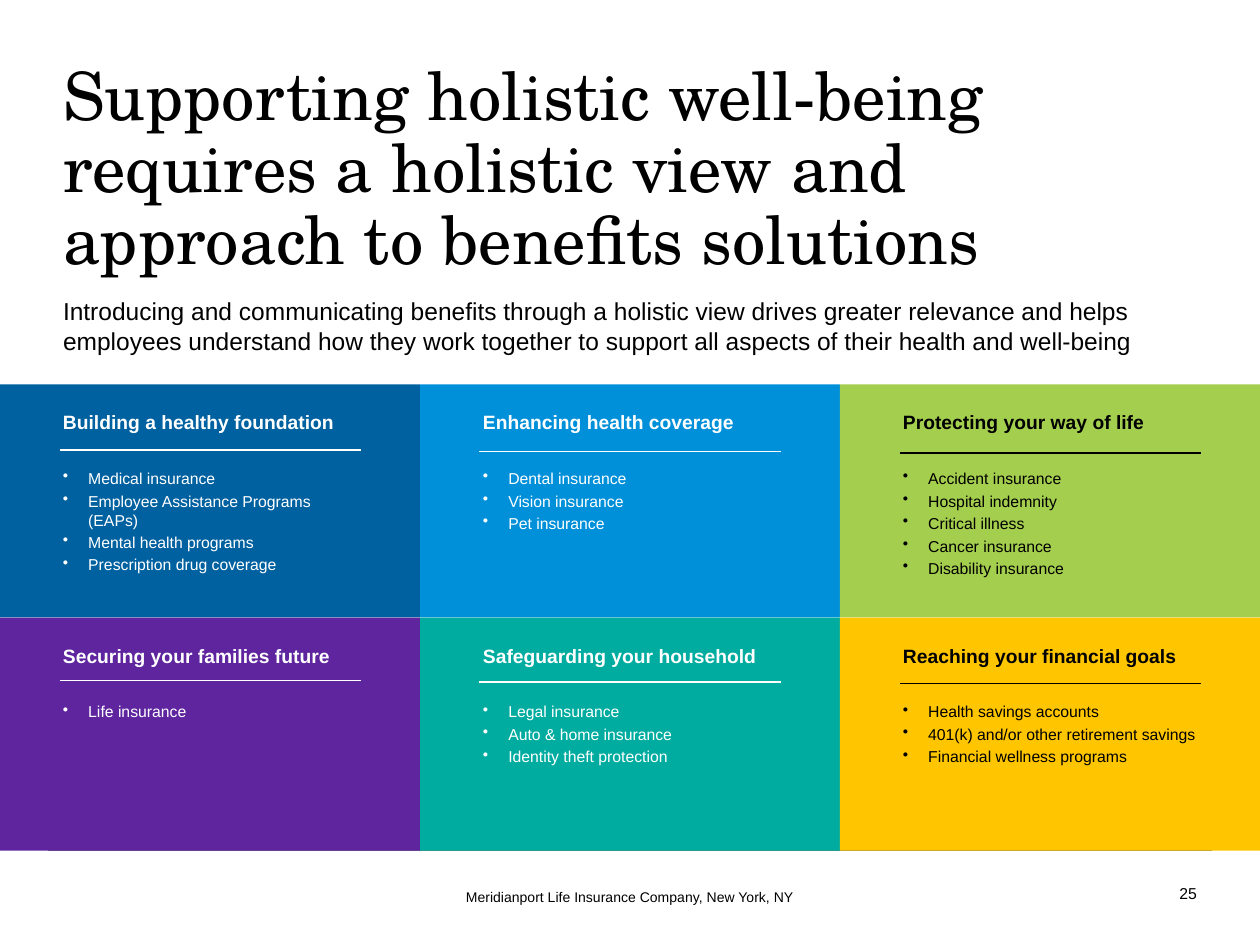
from dataclasses import dataclass

from lxml import etree
from pptx import Presentation
from pptx.dml.color import RGBColor
from pptx.enum.shapes import MSO_CONNECTOR, MSO_SHAPE
from pptx.enum.text import MSO_ANCHOR, MSO_AUTO_SIZE, PP_ALIGN
from pptx.oxml.ns import qn
from pptx.util import Cm, Pt

LEFT, CENTER, RIGHT = PP_ALIGN.LEFT, PP_ALIGN.CENTER, PP_ALIGN.RIGHT
TOP, MIDDLE = MSO_ANCHOR.TOP, MSO_ANCHOR.MIDDLE
RECTANGLE, STRAIGHT = MSO_SHAPE.RECTANGLE, MSO_CONNECTOR.STRAIGHT

COLORS = {
    "black": "000000", "white": "FFFFFF", "gray": "75787B",
    "navy": "0061A0", "blue": "0090DA", "green": "A4CE4E",
    "purple": "5F259F", "teal": "00ACA0", "yellow": "FFC600",
}
SERIF, SANS = "TeX Gyre Schola", "Arial"

# Grid of benefit cells
COLUMNS = 3
GRID_TOP, CELL_HEIGHT = Cm(7.75), Cm(4.7)
MARGIN, TEXT_OFFSET = Cm(1.27), Cm(0.53)
TEXT_WIDTH, TEXT_HEIGHT = Cm(5.92), Cm(3.66)
RULE_INSET, RULE_WIDTH = Cm(1.2), Cm(6.07)
RULE_TOP, RULE_PITCH, RULE_STEP = Cm(9.07), Cm(4.65), Cm(0.03)
BULLET_INDENT = Cm(0.51)


@dataclass
class Benefit:
    heading: str
    items: list[str]
    fill: str
    text_color: str = "white"


BENEFITS = [
    Benefit("Building a healthy foundation",
            ["Medical insurance", "Employee Assistance Programs (EAPs)",
             "Mental health programs", "Prescription drug coverage"], "navy"),
    Benefit("Enhancing health coverage",
            ["Dental insurance", "Vision insurance", "Pet insurance"], "blue"),
    Benefit("Protecting your way of life",
            ["Accident insurance", "Hospital indemnity", "Critical illness",
             "Cancer insurance", "Disability insurance"], "green", "black"),
    Benefit("Securing your families future", ["Life insurance"], "purple"),
    Benefit("Safeguarding your household",
            ["Legal insurance", "Auto & home insurance",
             "Identity theft protection"], "teal"),
    Benefit("Reaching your financial goals",
            ["Health savings accounts", "401(k) and/or other retirement savings",
             "Financial wellness programs"], "yellow", "black"),
]


def rgb(name: str) -> RGBColor:
    return RGBColor.from_string(COLORS[name])


def set_values(target, values: dict) -> None:
    for name, value in values.items():
        setattr(target, name, value)


def set_bullet(paragraph, character: str = "", indent: int = 0) -> None:
    properties = paragraph._p.get_or_add_pPr()
    properties.set("marL", str(indent))
    properties.set("indent", str(-indent))
    if character:
        etree.SubElement(properties, qn("a:buChar")).set("char", character)
    else:
        etree.SubElement(properties, qn("a:buNone"))


def format_paragraph(paragraph, text: str, size: float, color: str = "black",
                     font: str = SANS, bold: bool = False, **layout) -> None:
    paragraph.text = text
    set_values(paragraph, {"space_before": Pt(0), **layout})
    set_values(paragraph.font, {"name": font, "size": Pt(size), "bold": bold})
    paragraph.font.color.rgb = rgb(color)


def prepare_frame(shape, anchor: MSO_ANCHOR = TOP, wrap: bool = True):
    frame = shape.text_frame
    set_values(frame, {
        "margin_left": 0, "margin_right": 0, "margin_top": 0, "margin_bottom": 0,
        "word_wrap": wrap, "auto_size": MSO_AUTO_SIZE.NONE,
        "vertical_anchor": anchor,
    })
    return frame


def place(shape, left: int, top: int, width: int, height: int) -> None:
    set_values(shape, {"left": left, "top": top, "width": width, "height": height})


def add_rule(slide, left: int, top: int, width: int, color: str, weight: float) -> None:
    rule = slide.shapes.add_connector(STRAIGHT, left, top, left + width, top)
    rule.line.color.rgb = rgb(color)
    rule.line.width = Pt(weight)
    etree.SubElement(rule._element.spPr, qn("a:effectLst"))


def add_benefit(slide, benefit: Benefit, index: int, cell_width: int) -> None:
    row, column = divmod(index, COLUMNS)
    left, top = column * cell_width, GRID_TOP + row * CELL_HEIGHT

    # Colour block
    block = slide.shapes.add_shape(RECTANGLE, left, top, cell_width, CELL_HEIGHT)
    block.shadow.inherit = False
    block.fill.solid()
    block.fill.fore_color.rgb = rgb(benefit.fill)
    block.line.fill.background()

    # Heading and bullets
    box = slide.shapes.add_textbox(left + MARGIN, top + TEXT_OFFSET,
                                   TEXT_WIDTH, TEXT_HEIGHT)
    frame = prepare_frame(box)
    format_paragraph(frame.paragraphs[0], benefit.heading, 11, benefit.text_color,
                     bold=True, space_after=Pt(18))
    for item in benefit.items:
        paragraph = frame.add_paragraph()
        set_bullet(paragraph, "•", BULLET_INDENT)
        format_paragraph(paragraph, item, 9, benefit.text_color, space_before=Pt(2))

    # Line under the heading
    rule_top = RULE_TOP + row * RULE_PITCH + column * RULE_STEP
    add_rule(slide, left + RULE_INSET, rule_top, RULE_WIDTH, benefit.text_color, 1)


def main() -> None:
    presentation = Presentation()
    presentation.slide_width, presentation.slide_height = Cm(25.4), Cm(19.05)
    slide = presentation.slides.add_slide(presentation.slide_layouts[1])

    # Title and introduction
    title, introduction = slide.placeholders
    place(title, MARGIN, Cm(1.27), Cm(22.86), Cm(2.57))
    format_paragraph(
        prepare_frame(title).paragraphs[0],
        "Supporting holistic well-being requires a holistic view and "
        "\vapproach to benefits solutions",
        38, font=SERIF, alignment=LEFT, line_spacing=0.9)
    place(introduction, MARGIN, Cm(5.97), Cm(22.86), Cm(1.09))
    paragraph = prepare_frame(introduction).paragraphs[0]
    set_bullet(paragraph)
    format_paragraph(
        paragraph,
        "Introducing and communicating benefits through a holistic view drives "
        "greater relevance and helps employees understand how they work together "
        "to support all aspects of their health and well-being", 14)

    # Footer
    add_rule(slide, Cm(0.97), Cm(17.15), Cm(23.46), "gray", 0.75)
    company = slide.shapes.add_textbox(Cm(9.04), Cm(17.78), Cm(7.32), Cm(0.61))
    format_paragraph(prepare_frame(company, MIDDLE, wrap=False).paragraphs[0],
                     "Meridianport Life Insurance Company, New York, NY", 8,
                     alignment=CENTER)
    number = slide.shapes.add_textbox(Cm(23.37), Cm(17.68), Cm(0.76), Cm(0.64))
    format_paragraph(prepare_frame(number, MIDDLE).paragraphs[0], "25", 9,
                     alignment=RIGHT)

    # Benefit cells
    cell_width = presentation.slide_width // COLUMNS
    for index, benefit in enumerate(BENEFITS):
        add_benefit(slide, benefit, index, cell_width)

    presentation.save("out.pptx")


if __name__ == "__main__":
    main()
